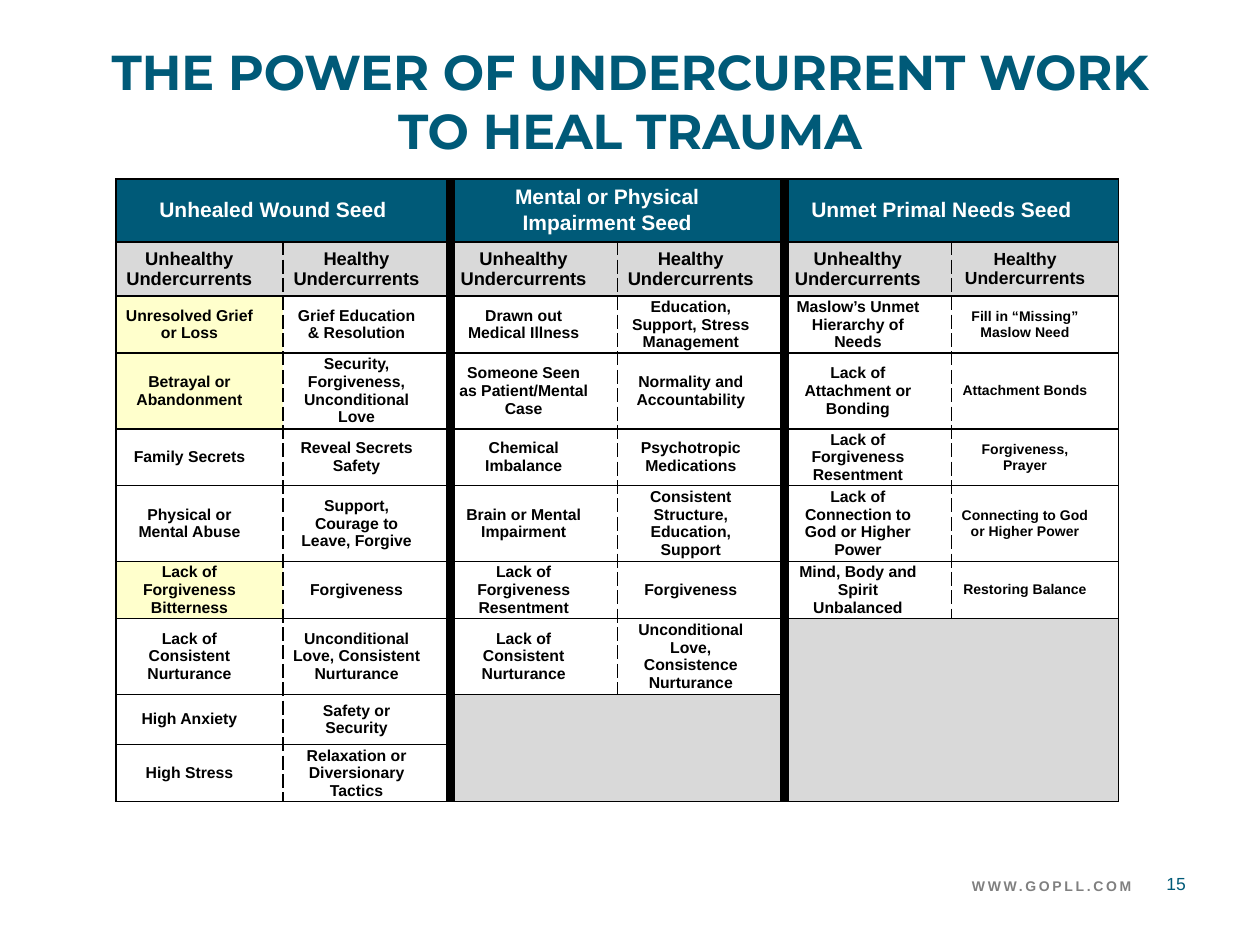
from lxml import etree
from pptx import Presentation
from pptx.dml.color import RGBColor
from pptx.enum.text import MSO_ANCHOR, PP_ALIGN
from pptx.oxml.ns import qn
from pptx.util import Inches, Pt

MIDDLE = MSO_ANCHOR.MIDDLE
CENTER, RIGHT = PP_ALIGN.CENTER, PP_ALIGN.RIGHT
COLORS = {"teal": "005A78", "gray": "D9D9D9", "yellow": "FFFFCC",
          "white": "FFFFFF", "black": "000000", "footer": "808080"}
NO_STYLE = "{2D5ABB26-0587-4C30-8999-92F81FD0307C}"


def write(frame, lines, align, color, **formats):
    frame.word_wrap = True
    for index, line in enumerate(lines):
        para = frame.paragraphs[0] if index == 0 else frame.add_paragraph()
        para.alignment = align
        if index:
            para.space_before = Pt(1.4)
        span = para.add_run()
        span.text = line
        span.font.color.rgb = RGBColor.from_string(COLORS[color])
        for name, value in formats.items():
            setattr(span.font, name, value)
    return span


def add_border(cell, side, position, width, dash):
    props = cell._tc.get_or_add_tcPr()
    line = etree.Element(qn(f"a:ln{side}"), w=str(Pt(width)))
    fill = etree.SubElement(line, qn("a:solidFill"))
    etree.SubElement(fill, qn("a:srgbClr"), val=COLORS["black"])
    etree.SubElement(line, qn("a:prstDash"), val=dash)
    props.insert(position, line)


deck = Presentation()
deck.slide_width, deck.slide_height = Inches(10), Inches(7.5)
page = deck.slides.add_slide(deck.slide_layouts[6])

texts = [
    ((0.5, 0.17, 9, 1.25), "THE POWER OF UNDERCURRENT WORK TO HEAL TRAUMA", CENTER, "teal",
     {"name": "Montserrat", "size": Pt(28), "bold": True}),
    ((2.83, 6.9, 6.25, 0.26), "WWW.GOPLL.COM", RIGHT, "footer",
     {"name": "Arial", "size": Pt(8), "bold": True}),
    ((9.13, 6.83, 0.41, 0.37), "15", CENTER, "teal", {"name": "Arial", "size": Pt(10)}),
]
for place, text, align, color, formats in texts:
    box = page.shapes.add_textbox(*map(Inches, place))
    box.text_frame.vertical_anchor = MIDDLE
    span = write(box.text_frame, [text], align, color, **formats)
    if color == "footer":
        span.font._element.set("spc", "150")

seeds = ["Unhealed Wound Seed", "Mental or Physical\nImpairment Seed", "Unmet Primal Needs Seed"]
rows = [
    [text for seed in seeds for text in (seed, "")],
    ["Unhealthy Undercurrents", "Healthy Undercurrents"] * 3,
    ["Unresolved Grief or Loss", "Grief Education & Resolution", "Drawn out Medical Illness",
     "Education, Support, Stress Management", "Maslow’s Unmet Hierarchy of Needs",
     "Fill in “Missing” Maslow Need"],
    ["Betrayal or Abandonment", "Security, Forgiveness, Unconditional Love",
     "Someone Seen as Patient/Mental Case", "Normality and Accountability",
     "Lack of Attachment or Bonding", "Attachment Bonds"],
    ["Family Secrets", "Reveal Secrets Safety", "Chemical Imbalance",
     "Psychotropic Medications", "Lack of Forgiveness Resentment", "Forgiveness, Prayer"],
    ["Physical or Mental Abuse", "Support, Courage to Leave, Forgive",
     "Brain or Mental Impairment", "Consistent Structure, Education, Support",
     "Lack of Connection to God or Higher Power", "Connecting to God or Higher Power"],
    ["Lack of Forgiveness Bitterness", "Forgiveness", "Lack of Forgiveness Resentment",
     "Forgiveness", "Mind, Body and Spirit Unbalanced", "Restoring Balance"],
    ["Lack of Consistent Nurturance", "Unconditional Love, Consistent Nurturance",
     "Lack of Consistent Nurturance", "Unconditional Love, Consistence Nurturance", "", ""],
    ["High Anxiety", "Safety or Security", "", "", "", ""],
    ["High Stress", "Relaxation or Diversionary Tactics", "", "", "", ""],
]
heights = [0.5, 0.43, 0.39, 0.58, 0.39, 0.58, 0.39, 0.58, 0.4, 0.39]
yellow_rows = (2, 3, 6)
blocks = [(0, 0, 0, 1), (0, 2, 0, 3), (0, 4, 0, 5), (7, 4, 9, 5), (8, 2, 9, 3)]
edges = [(1, "solid"), (1, "dash"), (6, "solid"), (1, "dash"), (6, "solid"), (1, "dash"), (1, "solid")]

frame = page.shapes.add_table(len(rows), 6, Inches(0.92), Inches(1.42), Inches(7.96), Inches(sum(heights)))
table = frame.table
table.first_row = table.horz_banding = False
table._tbl.tblPr.find(qn("a:tableStyleId")).text = NO_STYLE
for column in table.columns:
    column.width = Inches(7.96 / 6)
for row, height in zip(table.rows, heights):
    row.height = Inches(height)
for top, left, bottom, right in blocks:
    table.cell(top, left).merge(table.cell(bottom, right))

margins = {"margin_left": 0.07, "margin_right": 0.23, "margin_top": 0, "margin_bottom": 0}
for r, texts in enumerate(rows):
    for c, text in enumerate(texts):
        cell = table.cell(r, c)
        cell.vertical_anchor = MIDDLE
        for name, value in margins.items():
            setattr(cell, name, Inches(value))
        block = next((b for b in blocks if b[0] <= r <= b[2] and b[1] <= c <= b[3]), (r, c, r, c))
        top, left, bottom, right = block

        if r == 0:
            fill, size = "teal", 12
        elif r == 1:
            fill, size = "gray", 10 if c == 5 else 10.5
        else:
            fill, size = None, 8 if c == 5 else 9
            if top != bottom:
                fill = "gray"
            elif c == 0 and r in yellow_rows:
                fill = "yellow"
        if fill:
            cell.fill.solid()
            cell.fill.fore_color.rgb = RGBColor.from_string(COLORS[fill])
        else:
            cell.fill.background()
        if text:
            write(cell.text_frame, text.split("\n"), CENTER, "white" if r == 0 else "black",
                  name="Arial", size=Pt(size), bold=True)

        origin = (r, c) == (top, left)
        sides = [("L", c == left, edges[left]), ("R", origin or c == right, edges[right + 1]),
                 ("T", r == top, (1, "solid")), ("B", origin or r == bottom, (1, "solid"))]
        shown = [(side, edge) for side, visible, edge in sides if visible]
        for position, (side, edge) in enumerate(shown):
            add_border(cell, side, position, *edge)

deck.save("out.pptx")
